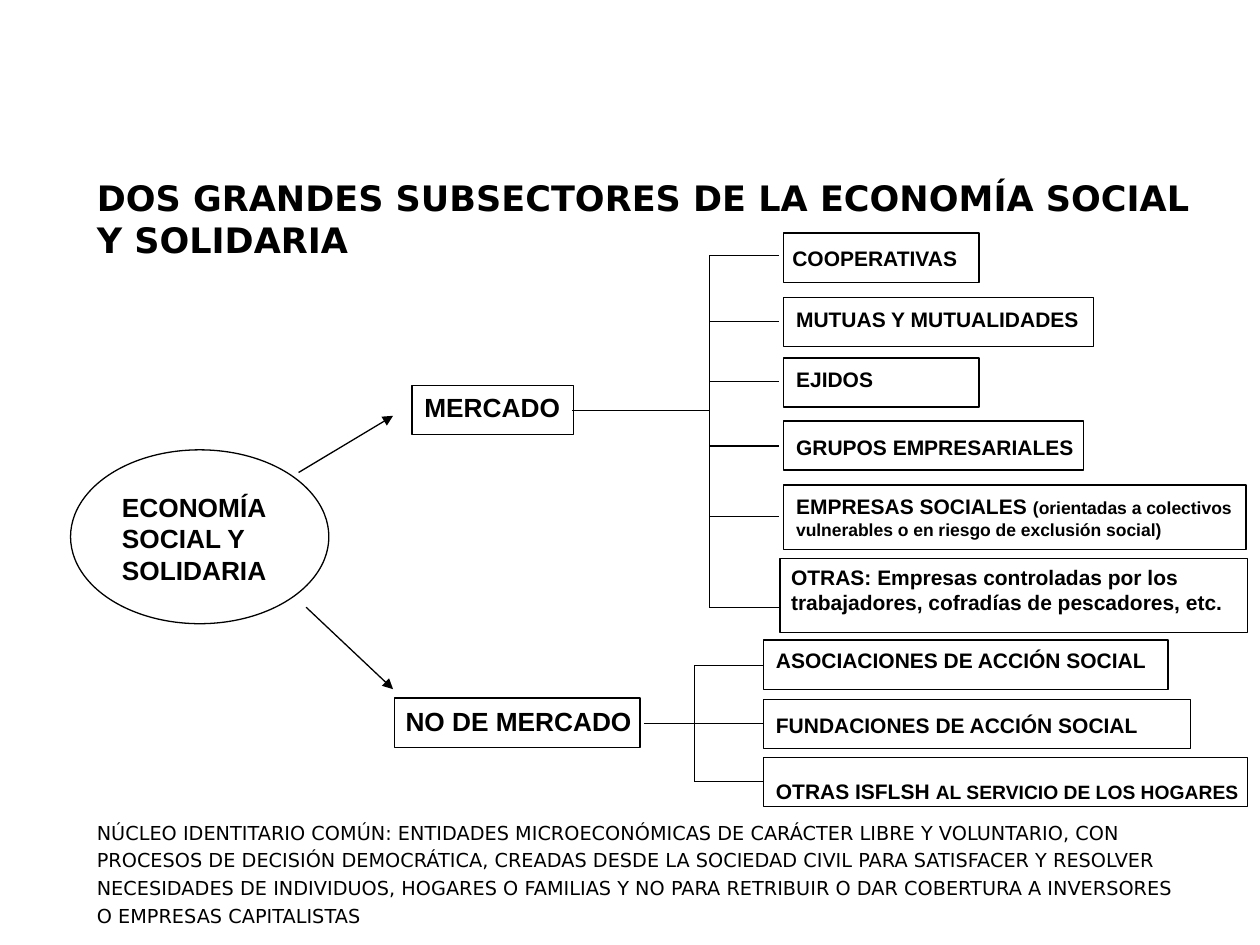
from pptx import Presentation
from pptx.dml.color import RGBColor
from pptx.enum.shapes import MSO_CONNECTOR, MSO_SHAPE
from pptx.enum.text import MSO_ANCHOR
from pptx.oxml.ns import qn
from pptx.util import Inches, Pt
from lxml import etree

RECTANGLE, ELLIPSE = MSO_SHAPE.RECTANGLE, MSO_SHAPE.OVAL
STRAIGHT = MSO_CONNECTOR.STRAIGHT
TOP, MIDDLE = MSO_ANCHOR.TOP, MSO_ANCHOR.MIDDLE

THEME = {
    "ink": RGBColor(0, 0, 0),
    "line": Pt(0.75),
    "heading_font": "DejaVu Sans",
    "diagram_font": "Arial",
    "title": 20, "footer": 11, "node": 15, "item": 12, "aside": 11, "detail": 10,
}

# Content: places are left, top, width, height in inches
TITLE = "DOS GRANDES SUBSECTORES DE LA ECONOMÍA SOCIAL Y SOLIDARIA"
FOOTER = (
    "NÚCLEO IDENTITARIO COMÚN: ENTIDADES MICROECONÓMICAS DE CARÁCTER LIBRE Y "
    "VOLUNTARIO, CON PROCESOS DE DECISIÓN DEMOCRÁTICA, CREADAS DESDE LA SOCIEDAD "
    "CIVIL PARA SATISFACER Y RESOLVER NECESIDADES DE INDIVIDUOS, HOGARES O FAMILIAS "
    "Y NO PARA RETRIBUIR O DAR COBERTURA A INVERSORES O EMPRESAS CAPITALISTAS"
)
ROOT = {
    "lines": ["ECONOMÍA", "SOCIAL Y", "SOLIDARIA"],
    "outline": (0.56, 3.57, 2.05, 1.38),
    "label": (0.87, 3.85, 1.36, 0.86),
}
# Each item: text, smaller text, outline, label place, height of its branch line
SECTORS = [
    {
        "name": "MERCADO",
        "outline": (3.27, 3.06, 1.28, 0.39),
        "label": (3.27, 3.06, 1.71, 0.35),
        "arrow": ((2.37, 3.75), (3.12, 3.3)),
        "stem": (4.54, 5.63, 3.26),
        "branch_end": 6.18,
        "small": "detail",
        "items": [
            ("COOPERATIVAS", "", (6.22, 1.85, 1.55, 0.39), (6.19, 1.9, 1.78, 0.3), 2.03),
            ("MUTUAS Y MUTUALIDADES", "", (6.22, 2.36, 2.46, 0.39), (6.22, 2.38, 2.72, 0.3), 2.55),
            ("EJIDOS", "", (6.22, 2.84, 1.55, 0.39), (6.22, 2.86, 1.71, 0.3), 3.03),
            ("GRUPOS EMPRESARIALES", "", (6.22, 3.34, 2.38, 0.39), (6.22, 3.4, 2.5, 0.3), 3.54),
            ("EMPRESAS SOCIALES ",
             "(orientadas a colectivos vulnerables o en riesgo de exclusión social)",
             (6.22, 3.85, 3.67, 0.51), (6.22, 3.87, 3.67, 0.47), 4.1),
            ("OTRAS: Empresas controladas por los trabajadores, cofradías de pescadores, etc.", "",
             (6.19, 4.43, 3.71, 0.59), (6.18, 4.43, 3.72, 0.51), 4.82),
        ],
    },
    {
        "name": "NO DE MERCADO",
        "outline": (3.13, 5.54, 1.95, 0.39),
        "label": (3.12, 5.55, 2.25, 0.35),
        "arrow": ((2.43, 4.82), (3.12, 5.47)),
        "stem": (5.11, 5.51, 5.74),
        "branch_end": 6.06,
        "small": "aside",
        "items": [
            ("ASOCIACIONES DE ACCIÓN SOCIAL", "", (6.06, 5.08, 3.21, 0.39), (6.06, 5.09, 3.91, 0.3), 5.28),
            ("FUNDACIONES DE ACCIÓN SOCIAL", "", (6.06, 5.55, 3.39, 0.39), (6.06, 5.61, 3.91, 0.3), 5.74),
            ("OTRAS ISFLSH ", "AL SERVICIO DE LOS HOGARES",
             (6.06, 6.01, 3.84, 0.39), (6.06, 6.13, 3.91, 0.3), 6.2),
        ],
    },
]


def add_text(page, place, paragraphs, font, bold=True, anchor=TOP, wrap=True):
    """Each paragraph is a list of (text, theme size) spans."""
    box = page.shapes.add_textbox(*map(Inches, place))
    frame = box.text_frame
    frame.word_wrap = wrap
    frame.vertical_anchor = anchor
    frame.text = "\n".join("" for _ in paragraphs)
    for para, spans in zip(frame.paragraphs, paragraphs):
        for text, size in spans:
            span = para.add_run()
            span.text = text
            span.font.name = THEME[font]
            span.font.size = Pt(THEME[size])
            span.font.bold = bold
            span.font.color.rgb = THEME["ink"]
    return frame


def add_outline(page, kind, place):
    shape = page.shapes.add_shape(kind, *map(Inches, place))
    shape.shadow.inherit = False
    shape.fill.background()
    shape.line.color.rgb = THEME["ink"]
    shape.line.width = THEME["line"]


def add_line(page, start, end, arrow=False):
    line = page.shapes.add_connector(STRAIGHT, *map(Inches, (*start, *end)))
    line.line.color.rgb = THEME["ink"]
    line.line.width = THEME["line"]
    if arrow:
        etree.SubElement(line.line._get_or_add_ln(), qn("a:tailEnd"), type="triangle")
    etree.SubElement(line._element.spPr, qn("a:effectLst"))


def add_sector(page, sector):
    # Sector node and the arrow that leads to it
    add_outline(page, RECTANGLE, sector["outline"])
    add_text(page, sector["label"], [[(sector["name"], "node")]], "diagram_font")
    add_line(page, *sector["arrow"], arrow=True)

    # Stem, trunk and branches
    start, trunk, height = sector["stem"]
    branches = [item[-1] for item in sector["items"]]
    add_line(page, (start, height), (trunk, height))
    add_line(page, (trunk, min(branches)), (trunk, max(branches)))
    for branch in branches:
        add_line(page, (trunk, branch), (sector["branch_end"], branch))

    # Items
    for text, small_text, outline, label, _ in sector["items"]:
        spans = [(text, "item")]
        if small_text:
            spans.append((small_text, sector["small"]))
        add_outline(page, RECTANGLE, outline)
        add_text(page, label, [spans], "diagram_font")


def main():
    deck = Presentation()
    deck.slide_width, deck.slide_height = Inches(10), Inches(7.5)
    page = deck.slides.add_slide(deck.slide_layouts[6])

    # Title and footer
    add_text(page, (0.67, 1.11, 9, 1.25), [[(TITLE, "title")]], "heading_font", anchor=MIDDLE)
    footer = add_text(page, (0.67, 6.43, 8.83, 0.98), [[(FOOTER, "footer")]],
                      "heading_font", bold=False)
    footer.paragraphs[0].line_spacing = 1.2

    # Root of the tree
    add_outline(page, ELLIPSE, ROOT["outline"])
    add_text(page, ROOT["label"], [[(line, "node")] for line in ROOT["lines"]],
             "diagram_font", wrap=False)

    for sector in SECTORS:
        add_sector(page, sector)

    deck.save("out.pptx")


if __name__ == "__main__":
    main()
